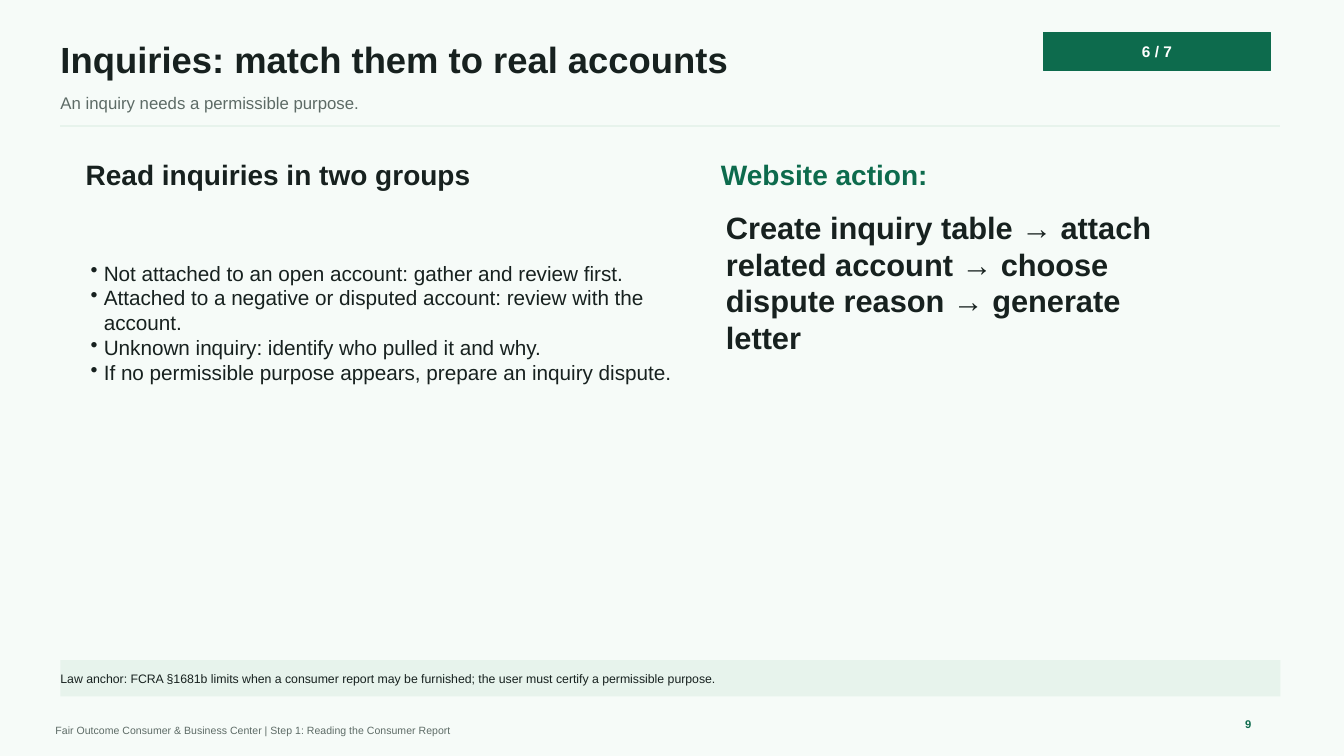
from dataclasses import dataclass

from lxml.etree import SubElement
from pptx import Presentation
from pptx.dml.color import RGBColor
from pptx.enum.shapes import MSO_CONNECTOR, MSO_SHAPE
from pptx.enum.text import MSO_ANCHOR, MSO_AUTO_SIZE, PP_ALIGN
from pptx.oxml.ns import qn
from pptx.util import Inches, Pt


@dataclass(frozen=True)
class Theme:
    font: str = "Arial"
    paper: str = "F6FBF8"
    ink: str = "17211F"
    muted: str = "5D6B66"
    green: str = "0D6B4D"
    mint: str = "E7F3EC"
    white: str = "FFFFFF"
    title: float = 26
    action: float = 22
    heading: float = 20
    body: float = 14.8
    subtitle: float = 12
    badge: float = 11
    note: float = 8.8
    page: float = 8
    footer: float = 7.5


T = Theme()

# Grid: 133.3 columns by 75 rows of square cells
CELL = 0.1
COLS, ROWS = 133.3, 75
MARGIN, CONTENT = 6, 121
LEFT_COL, RIGHT_COL = 8.5, 71.5
HEADING_ROW = 15.5
BODY_INSET = 0.5


def cells(*counts):
    return [Inches(n * CELL) for n in counts]


def rgb(value):
    return RGBColor.from_string(value)


def set_bullet(p, indent):
    pPr = p._p.get_or_add_pPr()
    pPr.set("marL", str(indent))
    pPr.set("indent", str(-indent))
    SubElement(pPr, qn("a:buChar")).set("char", "•")


def write(sp, *lines, size, color=T.ink, bold=False, align=PP_ALIGN.LEFT, bullets=False):
    """Fill a shape with one formatted paragraph per line."""
    tf = sp.text_frame
    tf.word_wrap = True
    tf.auto_size = MSO_AUTO_SIZE.NONE
    tf.vertical_anchor = MSO_ANCHOR.MIDDLE
    tf.margin_left = tf.margin_right = tf.margin_top = tf.margin_bottom = 0
    for i, line in enumerate(lines):
        p = tf.add_paragraph() if i else tf.paragraphs[0]
        p.alignment = align
        if bullets:
            set_bullet(p, Inches(0.13))
        r = p.add_run()
        r.text = line
        r.font.name, r.font.size, r.font.bold = T.font, Pt(size), bold
        r.font.color.rgb = rgb(color)


def add_title(s, box, text):
    sp = s.shapes.title
    sp.left, sp.top, sp.width, sp.height = cells(*box)
    write(sp, text, size=T.title, bold=True)


def add_text(s, box, *lines, **fmt):
    write(s.shapes.add_textbox(*cells(*box)), *lines, **fmt)


def add_panel(s, box, text, fill, outline=None, **fmt):
    sp = s.shapes.add_shape(MSO_SHAPE.RECTANGLE, *cells(*box))
    sp.shadow.inherit = False
    sp.fill.solid()
    sp.fill.fore_color.rgb = rgb(fill)
    if outline:
        sp.line.color.rgb = rgb(outline)
        sp.line.width = Pt(0.75)
    else:
        sp.line.fill.background()
    write(sp, text, **fmt)


def add_rule(s, row):
    line = s.shapes.add_connector(
        MSO_CONNECTOR.STRAIGHT, *cells(MARGIN, row, MARGIN + CONTENT, row))
    line.line.color.rgb = rgb(T.mint)
    line.line.width = Pt(1)
    SubElement(line._element.spPr, qn("a:effectLst"))


def add_heading(s, col, text, color=T.ink):
    add_text(s, (col, HEADING_ROW, 48, 3.5), text, size=T.heading, color=color, bold=True)


def main():
    prs = Presentation()
    prs.slide_width, prs.slide_height = cells(COLS, ROWS)
    s = prs.slides.add_slide(prs.slide_layouts[5])
    s.background.fill.solid()
    s.background.fill.fore_color.rgb = rgb(T.paper)

    # Header
    add_title(s, (MARGIN, 3.6, 89, 4.5), "Inquiries: match them to real accounts")
    add_text(s, (MARGIN, 8.8, 105, 2.8), "An inquiry needs a permissible purpose.",
             size=T.subtitle, color=T.muted)
    add_rule(s, 12.5)
    add_panel(s, (103.5, 3.2, 22.5, 3.8), "6 / 7", T.green, outline=T.green,
              size=T.badge, color=T.white, bold=True, align=PP_ALIGN.CENTER)

    # Left column: how to sort inquiries
    add_heading(s, LEFT_COL, "Read inquiries in two groups")
    add_text(s, (LEFT_COL + BODY_INSET, 21, 58, 22),
             "Not attached to an open account: gather and review first.",
             "Attached to a negative or disputed account: review with the account.",
             "Unknown inquiry: identify who pulled it and why.",
             "If no permissible purpose appears, prepare an inquiry dispute.",
             size=T.body, bullets=True)

    # Right column: what to do on the website
    add_heading(s, RIGHT_COL, "Website action:", T.green)
    add_text(s, (RIGHT_COL + BODY_INSET, 22, 46, 12),
             "Create inquiry table → attach related account → choose dispute reason "
             "→ generate letter", size=T.action, bold=True)

    # Law note and footer
    add_panel(s, (MARGIN, 65.5, CONTENT, 3.6),
              "Law anchor: FCRA §1681b limits when a consumer report may be furnished; "
              "the user must certify a permissible purpose.", T.mint, size=T.note)
    add_text(s, (5.5, 71.5, 95, 2),
             "Fair Outcome Consumer & Business Center | Step 1: Reading the Consumer Report",
             size=T.footer, color=T.muted)
    add_text(s, (123.5, 70.8, 4, 2), "9", size=T.page, color=T.green, bold=True)

    prs.save("out.pptx")


if __name__ == "__main__":
    main()
